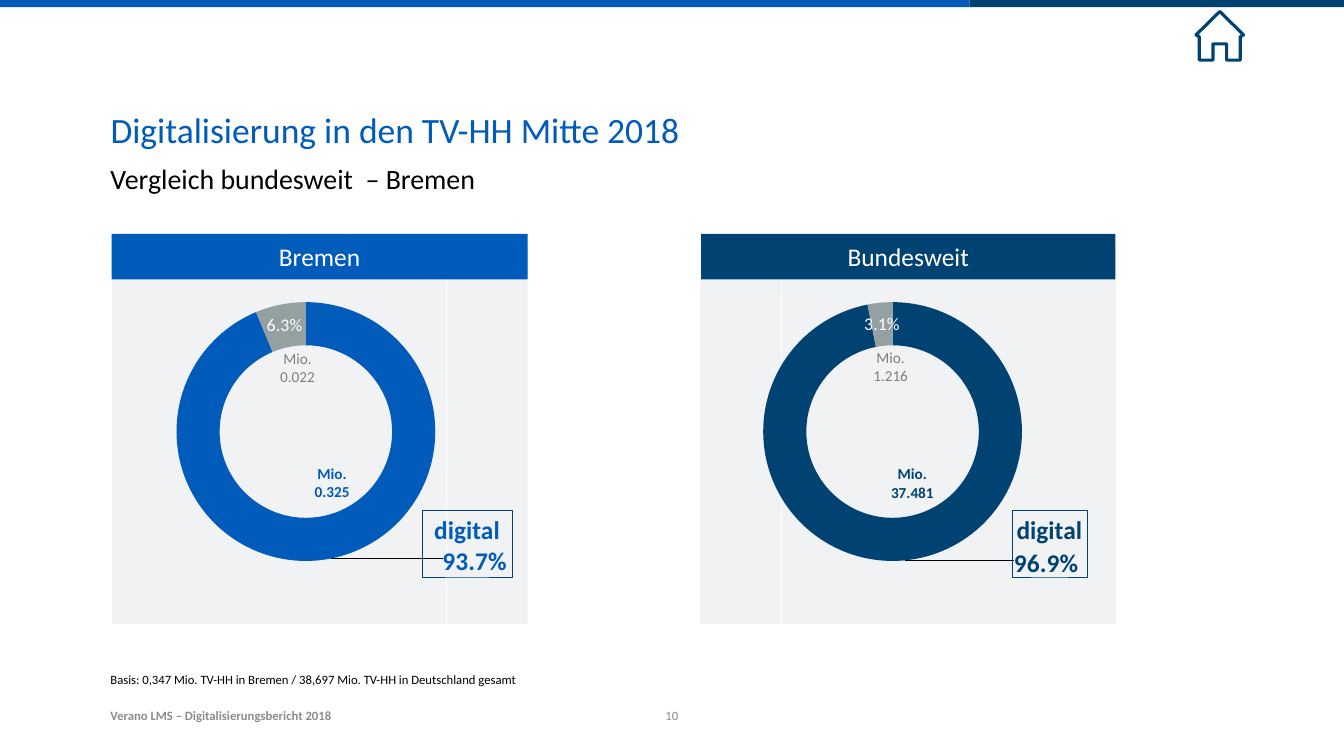
from dataclasses import dataclass

from lxml import etree
from pptx import Presentation
from pptx.chart.data import CategoryChartData
from pptx.dml.color import RGBColor
from pptx.enum.chart import XL_CHART_TYPE as ChartType
from pptx.enum.shapes import MSO_SHAPE as Shape
from pptx.enum.text import MSO_ANCHOR as Anchor, PP_ALIGN as Align
from pptx.oxml import parse_xml
from pptx.oxml.ns import nsdecls, qn
from pptx.util import Cm, Pt


@dataclass(frozen=True)
class Theme:
    font: str = "Calibri"
    blue: str = "005BBB"
    navy: str = "004372"
    panel: str = "F0F2F4"
    ring_grey: str = "95A0A2"
    label_grey: str = "7F7F7F"
    footer_grey: str = "8C8C8C"
    black: str = "000000"
    white: str = "FFFFFF"
    title: int = 28
    subtitle: int = 22
    heading: int = 20
    share: int = 14
    amount: int = 12
    small: int = 10


THEME = Theme()
MARGIN = 3.07


def rgb(color):
    return RGBColor.from_string(color)


def write(shape, text, size, color, bold=False, align=Align.LEFT, anchor=Anchor.TOP):
    frame = shape.text_frame
    frame.word_wrap = True
    frame.vertical_anchor = anchor
    frame.margin_left = frame.margin_right = frame.margin_top = frame.margin_bottom = 0
    frame.text = text
    paragraph = frame.paragraphs[0]
    paragraph.alignment = align
    font = paragraph.runs[0].font
    font.name, font.size, font.bold = THEME.font, Pt(size), bold
    font.color.rgb = rgb(color)


def add_text(slide, box, text, size, color, **style):
    shape = slide.shapes.add_textbox(*map(Cm, box))
    write(shape, text, size, color, **style)


def add_rectangle(slide, box, fill=None, line=None):
    shape = slide.shapes.add_shape(Shape.RECTANGLE, *map(Cm, box))
    shape.shadow.inherit = False
    if fill:
        shape.fill.solid()
        shape.fill.fore_color.rgb = rgb(fill)
    else:
        shape.fill.background()
    if line:
        shape.line.color.rgb = rgb(line)
        shape.line.width = Pt(0.25)
    else:
        shape.line.fill.background()
    return shape


def manual_layout(x, y, size=None):
    """Layout element: an offset for a label, or a fixed area for the plot."""
    fixed = size is not None
    target = '<c:layoutTarget val="inner"/>' if fixed else ""
    modes = '<c:xMode val="edge"/><c:yMode val="edge"/>' if fixed else ""
    extent = f'<c:w val="{size[0]}"/><c:h val="{size[1]}"/>' if fixed else ""
    return (f'<c:layout {nsdecls("c")}><c:manualLayout>{target}{modes}'
            f'<c:x val="{x}"/><c:y val="{y}"/>{extent}</c:manualLayout></c:layout>')


def label_body(number_format, size, color, bold=False, with_name=False):
    separator = "<c:separator>\n</c:separator>" if with_name else ""
    return (f"<c:numFmt formatCode='{number_format}' sourceLinked='0'/>"
            '<c:spPr><a:noFill/><a:ln><a:noFill/></a:ln></c:spPr>'
            '<c:txPr><a:bodyPr/><a:p><a:pPr>'
            f'<a:defRPr sz="{size * 100}" b="{int(bold)}">'
            f'<a:solidFill><a:srgbClr val="{color}"/></a:solidFill>'
            f'<a:latin typeface="{THEME.font}"/></a:defRPr></a:pPr>'
            '<a:endParaRPr lang="de-DE"/></a:p></c:txPr>'
            '<c:showLegendKey val="0"/><c:showVal val="1"/><c:showCatName val="0"/>'
            f'<c:showSerName val="{int(with_name)}"/><c:showPercent val="0"/>'
            f'<c:showBubbleSize val="0"/>{separator}')


def add_labels(series_element, general, digital, offsets):
    """Label a ring; the first point (digital) has its own style."""
    points = "".join(
        f'<c:dLbl><c:idx val="{index}"/>{manual_layout(*offset)}{body}</c:dLbl>'
        for index, (offset, body) in enumerate(zip(offsets, (digital, general))))
    labels = parse_xml(f'<c:dLbls {nsdecls("c", "a")}>{points}{general}'
                       '<c:showLeaderLines val="1"/></c:dLbls>')
    series_element.find(qn("c:cat")).addprevious(labels)


def add_doughnut(slide, box, color, amounts, shares, share_offset):
    data = CategoryChartData()
    data.categories = ["1", "2"]
    data.add_series("Mio.", amounts)
    data.add_series("Series 2", shares)
    chart = slide.shapes.add_chart(ChartType.DOUGHNUT, *map(Cm, box), data).chart
    chart.has_legend = chart.has_title = False
    chart.font.name, chart.font.size = THEME.font, Pt(18)
    chart.font.color.rgb = rgb(THEME.black)
    chart.plots[0].vary_by_categories = True

    # Invisible inner ring carries the amounts, outer ring the shares
    for series, fills in zip(chart.plots[0].series,
                             ((None, None), (color, THEME.ring_grey))):
        for index, fill in enumerate(fills):
            point = series.points[index].format
            point.line.fill.background()
            if fill:
                point.fill.solid()
                point.fill.fore_color.rgb = rgb(fill)
            else:
                point.fill.background()

    amount_ring, share_ring = chart.element.iter(qn("c:ser"))
    amount = ("#,##0.000", THEME.amount)
    share = '0.0"%"'
    add_labels(amount_ring, label_body(*amount, THEME.label_grey, with_name=True),
               label_body(*amount, color, bold=True, with_name=True),
               ((0.03, -0.03), (0.01, 0)))
    add_labels(share_ring, label_body(share, THEME.share, THEME.white),
               label_body(share, THEME.heading, color, bold=True), (share_offset,))

    # Plot area and hole
    plot_area = next(chart.element.iter(qn("c:plotArea")))
    for layout in plot_area.findall(qn("c:layout")):
        plot_area.remove(layout)
    plot_area.insert(0, parse_xml(manual_layout(0.233, 0.179, (0.579, 0.641))))
    doughnut = plot_area.find(qn("c:doughnutChart"))
    hole = doughnut.find(qn("c:holeSize"))
    if hole is None:
        hole = etree.SubElement(doughnut, qn("c:holeSize"))
    hole.set("val", "24")


def add_panels(slide, left, top, width, height):
    """Grey three-column table whose middle is covered by a white gap."""
    table = slide.shapes.add_table(1, 3, *map(Cm, (left, top, width, height))).table
    table.first_row = table.horz_banding = False
    for cell in table.iter_cells():
        cell.fill.solid()
        cell.fill.fore_color.rgb = rgb(THEME.panel)
    add_rectangle(slide, (left + 11.56, top - 0.07, 4.8, 10.85), THEME.white)


def add_region(slide, box, chart_left, name, color, amounts, shares, share_offset, tag_width):
    left, top, width = box
    add_doughnut(slide, (chart_left, top - 0.13, 12.42, 11.25),
                 color, amounts, shares, share_offset)
    header = add_rectangle(slide, (left, top, width, 1.26), color)
    write(header, name, THEME.heading, THEME.white, align=Align.CENTER, anchor=Anchor.MIDDLE)
    tag = add_rectangle(slide, (left + 8.63, top + 7.67, tag_width, 1.86), line=THEME.navy)
    write(tag, "digital", THEME.heading, color, bold=True, align=Align.CENTER)
    tag.text_frame.margin_top = Cm(0.1)


def add_home_icon(slide, left, top):
    half = [(0.66, 0.65), (0.57, 0.7), (0.57, 1.35), (0.19, 1.35), (0.19, 0.9)]
    outline = [(0, 0)] + half + [(-x, y) for x, y in reversed(half)]
    points = [(Cm(left + 0.66 + x), Cm(top + y)) for x, y in outline]
    builder = slide.shapes.build_freeform(*points[0])
    builder.add_line_segments(points[1:], close=True)
    icon = builder.convert_to_shape()
    icon.shadow.inherit = False
    icon.fill.background()
    icon.line.color.rgb = rgb(THEME.navy)
    icon.line.width = Pt(2.5)
    etree.SubElement(icon.line._get_or_add_ln(), qn("a:round"))


def add_frame(slide):
    # Top stripe and home icon
    add_rectangle(slide, (0, 0, 26.94, 0.2), THEME.blue)
    add_rectangle(slide, (26.94, 0, 10.4, 0.2), THEME.navy)
    add_home_icon(slide, 33.23, 0.32)

    # Title and subtitle
    title = slide.shapes.title
    title.left, title.top, title.width, title.height = map(Cm, (MARGIN, 3, 31.19, 1.5))
    write(title, "Digitalisierung in den TV-HH Mitte 2018", THEME.title, THEME.blue)
    add_text(slide, (MARGIN, 4.5, 27.8, 2), "Vergleich bundesweit  – Bremen",
             THEME.subtitle, THEME.black)

    # Basis, footer and page number
    add_text(slide, (MARGIN, 18.29, 27.8, 0.79),
             "Basis: 0,347 Mio. TV-HH in Bremen / 38,697 Mio. TV-HH in Deutschland gesamt",
             THEME.small, THEME.black, anchor=Anchor.BOTTOM)
    add_text(slide, (MARGIN, 19.51, 10.62, 0.58), "Verano LMS – Digitalisierungsbericht 2018",
             THEME.small, THEME.footer_grey, bold=True, anchor=Anchor.BOTTOM)
    add_text(slide, (18.26, 19.46, 0.81, 0.63), "10", THEME.small, THEME.footer_grey,
             align=Align.CENTER, anchor=Anchor.BOTTOM)


def main():
    presentation = Presentation()
    presentation.slide_width, presentation.slide_height = Cm(37.34), Cm(21)
    slide = presentation.slides.add_slide(presentation.slide_layouts[5])
    add_frame(slide)
    add_panels(slide, 3.1, 6.83, 27.91, 10.52)
    add_region(slide, (3.1, 6.5, 11.56), 2.01, "Bremen", THEME.blue,
               (0.325, 0.022), (93.7, 6.3), (0.33, 0.06), 2.49)
    add_region(slide, (19.48, 6.5, 11.51), 18.31, "Bundesweit", THEME.navy,
               (37.481, 1.216), (96.9, 3.1), (0.32, 0.06), 2.09)
    presentation.save("out.pptx")


if __name__ == "__main__":
    main()
